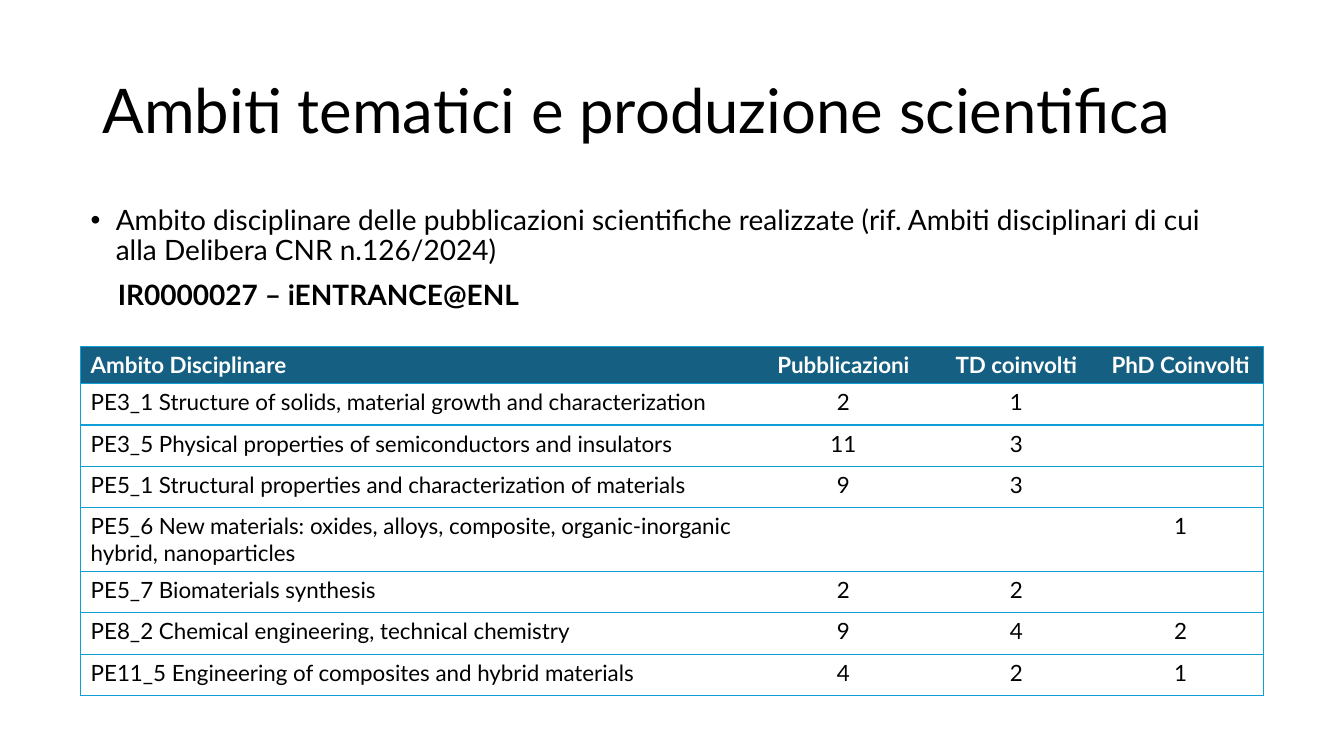
from lxml.etree import SubElement
from pptx import Presentation
from pptx.dml.color import RGBColor
from pptx.enum.text import MSO_ANCHOR, PP_ALIGN
from pptx.oxml.ns import qn
from pptx.util import Inches, Pt

BLACK = RGBColor(0x00, 0x00, 0x00)
WHITE = RGBColor(0xFF, 0xFF, 0xFF)
HEADER_BLUE = RGBColor(0x15, 0x60, 0x82)
LINE_BLUE = RGBColor(0x0F, 0x9E, 0xD5)
PLAIN_STYLE = "{2D5ABB26-0587-4C30-8999-92F81FD0307C}"

TEXT = {"name": "Lato", "bold": False}
TITLE = {**TEXT, "size": Pt(44)}
BODY = {**TEXT, "size": Pt(20)}
STRONG = {**BODY, "bold": True}
CELL = {**TEXT, "size": Pt(16)}
HEADER = {**CELL, "bold": True}

COLUMNS = [6.66, 1.81, 1.62, 1.64]
HEADER_HEIGHT, ROW_HEIGHT = 0.36, 0.41
ROWS = [
    ("Ambito Disciplinare", "Pubblicazioni", "TD coinvolti", "PhD Coinvolti"),
    ("PE3_1 Structure of solids, material growth and characterization", "2", "1", ""),
    ("PE3_5 Physical properties of semiconductors and insulators", "11", "3", ""),
    ("PE5_1 Structural properties and characterization of materials", "9", "3", ""),
    ("PE5_6 New materials: oxides, alloys, composite, organic-inorganic hybrid, nanoparticles",
     "", "", "1"),
    ("PE5_7 Biomaterials synthesis", "2", "2", ""),
    ("PE8_2 Chemical engineering, technical chemistry", "9", "4", "2"),
    ("PE11_5 Engineering of composites and hybrid materials", "4", "2", "1"),
]


def write(p, text, formats, color=BLACK):
    r = p.add_run()
    r.text = text
    for name, value in formats.items():
        setattr(r.font, name, value)
    r.font.color.rgb = color


def add_text_frame(s, box):
    tf = s.shapes.add_textbox(*map(Inches, box)).text_frame
    tf.word_wrap = True
    return tf


def add_title(s, box, text):
    tf = add_text_frame(s, box)
    tf.vertical_anchor = MSO_ANCHOR.MIDDLE
    p = tf.paragraphs[0]
    p.line_spacing = 0.9
    write(p, text, TITLE)


def add_body(s, box, bullet, project):
    tf = add_text_frame(s, box)
    paragraphs = [tf.paragraphs[0], tf.add_paragraph()]
    for p in paragraphs:
        p.line_spacing = 0.9
        p.space_before = Pt(10)
    # Bullet with a hanging indent, then the indented project name
    pPr = paragraphs[0]._p.get_or_add_pPr()
    pPr.set("marL", str(Inches(0.25)))
    pPr.set("indent", str(-Inches(0.25)))
    SubElement(pPr, qn("a:buFont")).set("typeface", "Arial")
    SubElement(pPr, qn("a:buChar")).set("char", "•")
    paragraphs[1]._p.get_or_add_pPr().set("marL", str(Inches(0.27)))
    write(paragraphs[0], bullet, BODY)
    write(paragraphs[1], project, STRONG)


def add_borders(cell, sides):
    tcPr = cell._tc.get_or_add_tcPr()
    for side in sides:
        ln = SubElement(tcPr, qn(f"a:ln{side}"), w=str(Pt(1)))
        fill = SubElement(ln, qn("a:solidFill"))
        SubElement(fill, qn("a:srgbClr"), val=str(LINE_BLUE))


def add_areas_table(s, box, rows):
    frame = s.shapes.add_table(len(rows), len(COLUMNS), *map(Inches, box))
    table = frame.table
    table._tbl.tblPr.find(qn("a:tableStyleId")).text = PLAIN_STYLE
    for column, width in zip(table.columns, COLUMNS):
        column.width = Inches(width)
    for i, values in enumerate(rows):
        is_header = i == 0
        table.rows[i].height = Inches(HEADER_HEIGHT if is_header else ROW_HEIGHT)
        for j, text in enumerate(values):
            cell = table.cell(i, j)
            # Outer frame and row rules, no inner column rules
            left = "L" if j == 0 else ""
            right = "R" if j == len(values) - 1 else ""
            add_borders(cell, left + right + "TB")
            if is_header:
                cell.fill.solid()
                cell.fill.fore_color.rgb = HEADER_BLUE
            else:
                cell.fill.background()
            p = cell.text_frame.paragraphs[0]
            p.alignment = PP_ALIGN.CENTER if j else PP_ALIGN.LEFT
            if text:
                write(p, text, HEADER if is_header else CELL, WHITE if is_header else BLACK)


def main():
    prs = Presentation()
    prs.slide_width, prs.slide_height = Inches(13.33), Inches(7.5)
    s = prs.slides.add_slide(prs.slide_layouts[6])
    add_title(s, (0.92, 0.4, 11.5, 1.45), "Ambiti tematici e produzione scientifica")
    add_body(
        s, (0.8, 2, 11.62, 4.76),
        "Ambito disciplinare delle pubblicazioni scientifiche realizzate "
        "(rif. Ambiti disciplinari di cui alla Delibera CNR n.126/2024)",
        "IR0000027 – iENTRANCE@ENL",
    )
    add_areas_table(s, (0.8, 3.44, 11.73, 3.43), ROWS)
    prs.save("out.pptx")


if __name__ == "__main__":
    main()
